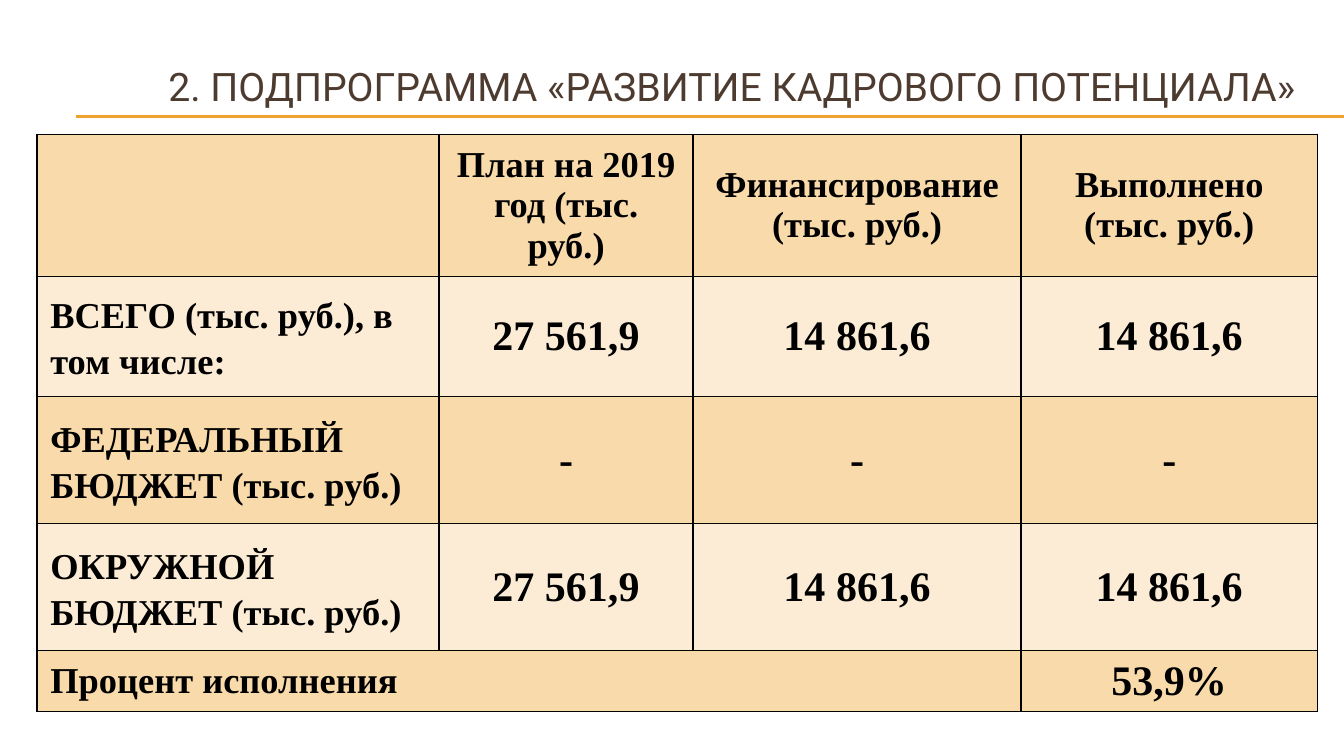
from collections import namedtuple
from dataclasses import dataclass

from lxml.etree import SubElement
from pptx import Presentation
from pptx.dml.color import RGBColor as Rgb
from pptx.enum.shapes import MSO_CONNECTOR as Connector
from pptx.enum.text import MSO_ANCHOR as Anchor, PP_ALIGN as Align
from pptx.oxml.ns import qn
from pptx.util import Cm, Pt

Box = namedtuple("Box", "left top width height")


@dataclass(frozen=True)
class Theme:
    heading_font: str = "Roboto"
    table_font: str = "Times New Roman"
    heading_size: float = 21
    label_size: float = 19.5
    value_size: float = 22.5
    heading: str = "4E3B30"
    rule: str = "F0A22E"
    ink: str = "000000"
    bands: tuple = ("F9DAAB", "FCECD5")


THEME = Theme()

HEADERS = ["", "План на 2019 год (тыс. руб.)",
           "Финансирование\n(тыс. руб.)", "Выполнено\n(тыс. руб.)"]
BUDGETS = [
    ["ВСЕГО (тыс. руб.), в том числе:", "27 561,9", "14 861,6", "14 861,6"],
    ["ФЕДЕРАЛЬНЫЙ БЮДЖЕТ (тыс. руб.)", "-", "-", "-"],
    ["ОКРУЖНОЙ БЮДЖЕТ (тыс. руб.)", "27 561,9", "14 861,6", "14 861,6"],
]
EXECUTION = ["Процент исполнения", "", "", "53,9%"]
COLUMN_WIDTHS = [7.6, 4.8, 6.2, 5.6]
ROW_HEIGHTS = [2.54, 2.27, 2.4, 2.4, 1.14]


def style_font(font, name, size, color, bold=False):
    font.name = name
    font.size = Pt(size)
    font.bold = bold
    font.color.rgb = Rgb.from_string(color)


def add_rules(slide, box):
    for y in (box.top, box.top + box.height):
        rule = slide.shapes.add_connector(
            Connector.STRAIGHT, Cm(box.left), Cm(y), Cm(box.left + box.width), Cm(y))
        rule.line.color.rgb = Rgb.from_string(THEME.rule)
        rule.line.width = Pt(0.75)
        SubElement(rule._element.spPr, qn("a:effectLst"))


def add_heading(slide, box, text):
    frame = slide.shapes.add_textbox(*map(Cm, box)).text_frame
    frame.word_wrap = True
    frame.vertical_anchor = Anchor.MIDDLE
    frame.text = text
    heading = frame.paragraphs[0]
    heading.alignment = Align.CENTER
    style_font(heading.runs[0].font, THEME.heading_font, THEME.heading_size, THEME.heading)


def border_cell(cell):
    properties = cell._tc.get_or_add_tcPr()
    for side in ("lnL", "lnR", "lnT", "lnB"):
        edge = SubElement(properties, qn(f"a:{side}"), w=str(Pt(1)))
        fill = SubElement(edge, qn("a:solidFill"))
        SubElement(fill, qn("a:srgbClr"), val=THEME.ink)


def fill_cell(cell, text, band, size, align, spacing):
    border_cell(cell)
    cell.fill.solid()
    cell.fill.fore_color.rgb = Rgb.from_string(band)
    cell.vertical_anchor = Anchor.MIDDLE
    cell.margin_left = cell.margin_right = Cm(0.25)
    cell.margin_top = cell.margin_bottom = Cm(0.1)
    cell.text_frame.text = text
    for paragraph in cell.text_frame.paragraphs:
        paragraph.alignment = align
        paragraph.line_spacing = spacing
        for run in paragraph.runs:
            style_font(run.font, THEME.table_font, size, THEME.ink, bold=True)


def add_budget_table(slide, box):
    rows = [HEADERS, *BUDGETS, EXECUTION]
    table = slide.shapes.add_table(len(rows), len(HEADERS), *map(Cm, box)).table
    for column, width in zip(table.columns, COLUMN_WIDTHS):
        column.width = Cm(box.width * width / sum(COLUMN_WIDTHS))
    for row, height in zip(table.rows, ROW_HEIGHTS):
        row.height = Cm(box.height * height / sum(ROW_HEIGHTS))
    for r, texts in enumerate(rows):
        for c, text in enumerate(texts):
            is_value = r > 0 and c > 0
            fill_cell(
                table.cell(r, c), text, THEME.bands[r % 2],
                THEME.value_size if is_value else THEME.label_size,
                Align.CENTER if r == 0 or is_value else Align.LEFT,
                1.15 if c == 0 and texts in BUDGETS else 1.0)
    last = len(rows) - 1
    table.cell(last, 0).merge(table.cell(last, 2))


def main():
    deck = Presentation()
    deck.slide_width, deck.slide_height = Cm(25.4), Cm(14.28)
    slide = deck.slides.add_slide(deck.slide_layouts[6])
    add_rules(slide, Box(1.43, 2.19, 23.97, 0.02))
    add_heading(slide, Box(2.7, 0.53, 22.27, 2.19),
                "2. ПОДПРОГРАММА «РАЗВИТИЕ КАДРОВОГО ПОТЕНЦИАЛА»")
    add_budget_table(slide, Box(0.7, 2.54, sum(COLUMN_WIDTHS), sum(ROW_HEIGHTS)))
    deck.save("out.pptx")


if __name__ == "__main__":
    main()
